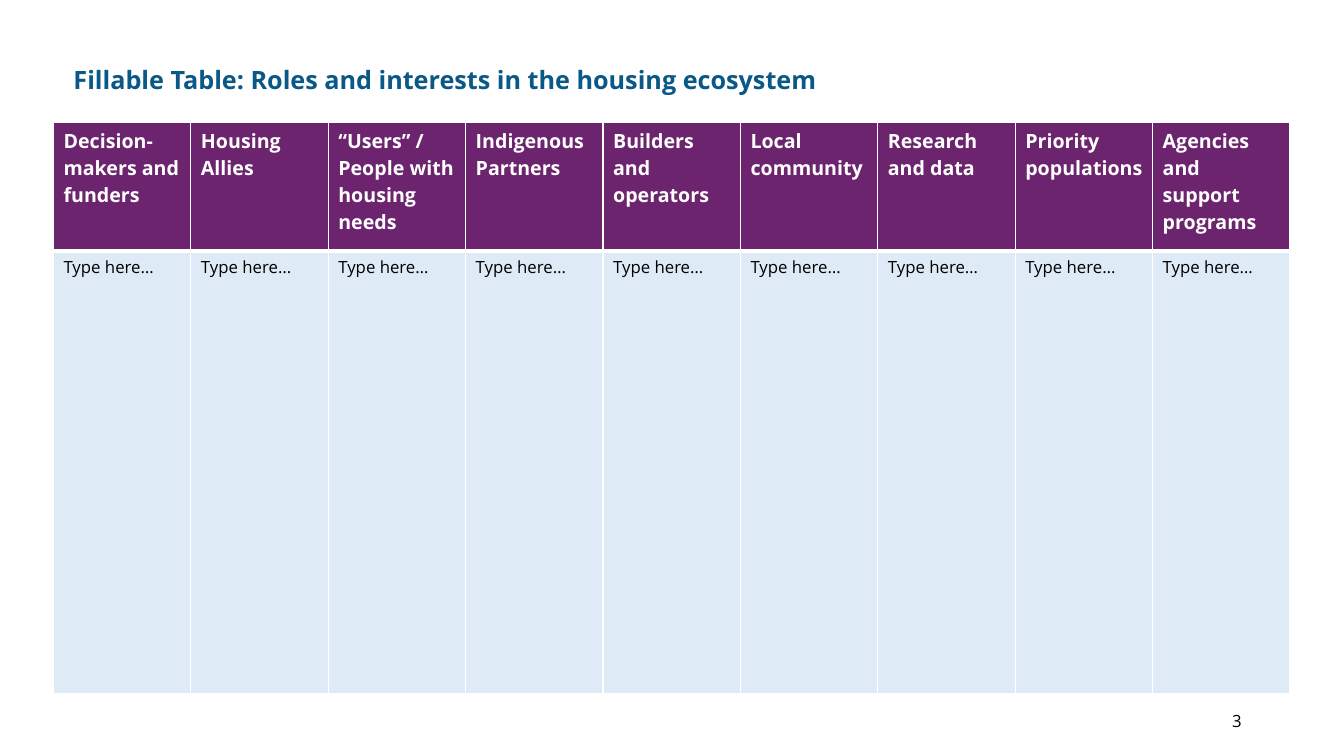
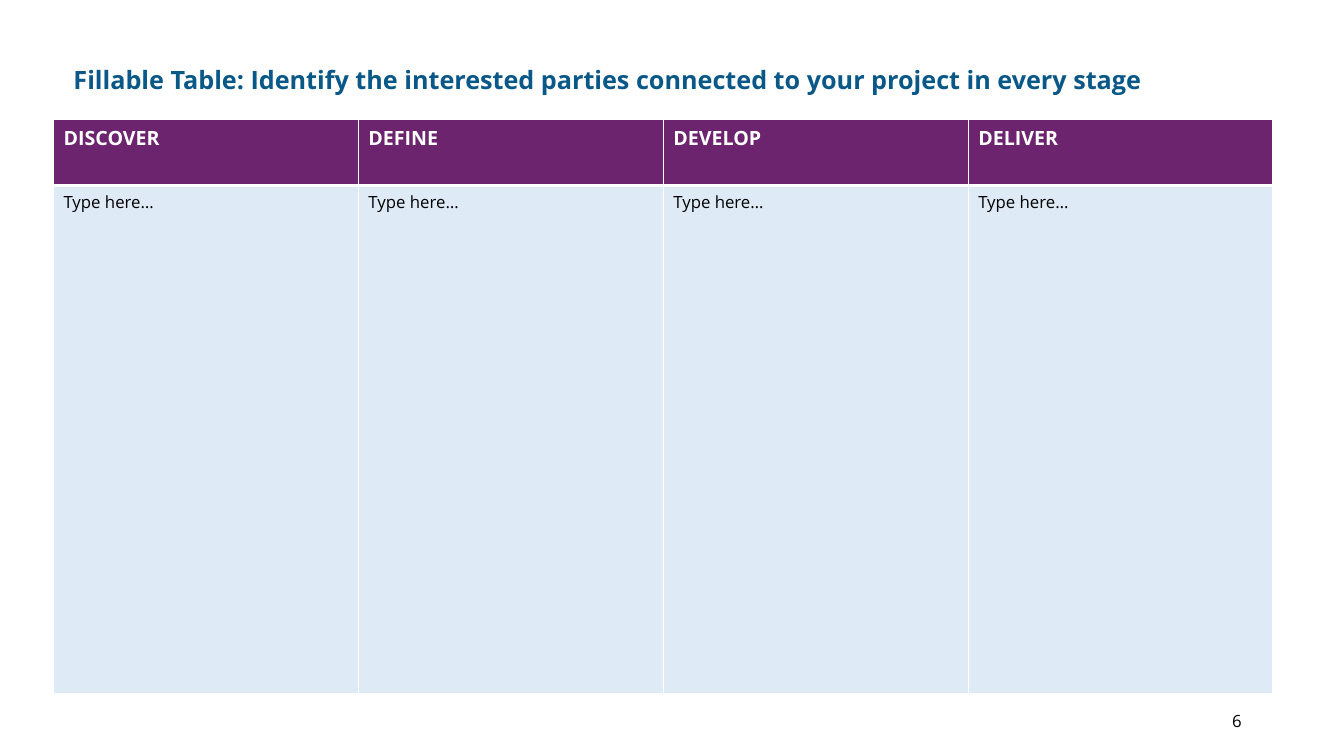
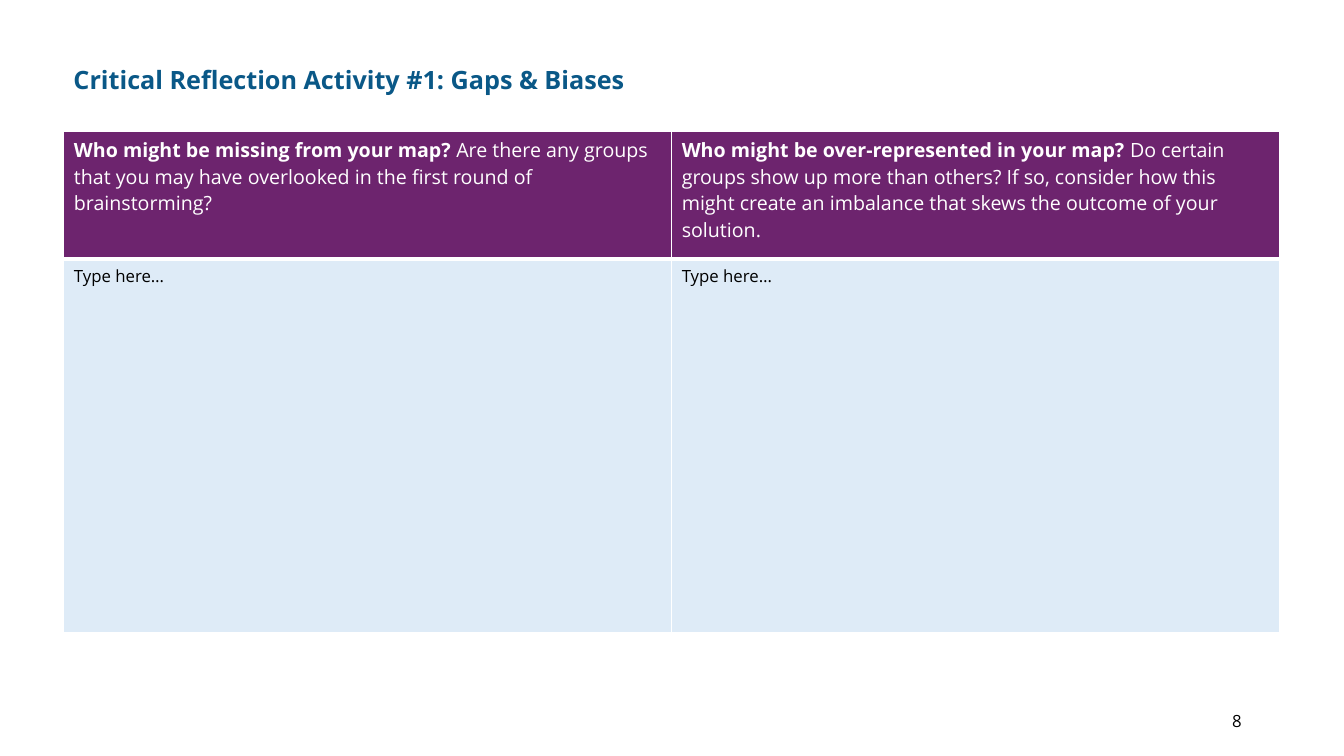
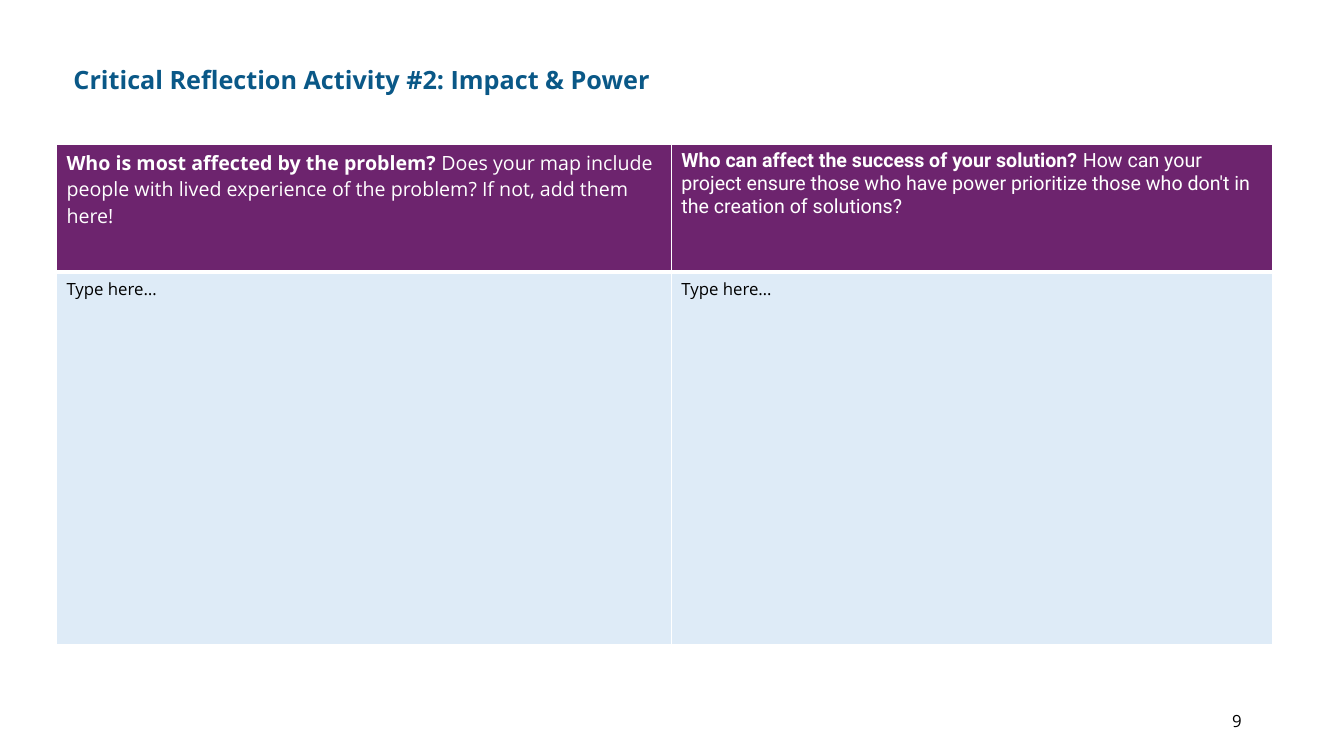
from dataclasses import dataclass

from lxml.etree import SubElement
from pptx import Presentation
from pptx.dml.color import RGBColor
from pptx.enum.text import MSO_ANCHOR as Anchor, MSO_AUTO_SIZE as AutoSize, PP_ALIGN as Align
from pptx.oxml.ns import qn
from pptx.util import Pt

# Shared style
FONT = "Open Sans"
TITLE_BLUE, HEADER_PURPLE, BODY_BLUE = "0A5887", "6D246E", "DEEBF7"
WHITE, BLACK = "FFFFFF", "000000"
THIN, THICK = 1, 3
HEADER_HEIGHT = 91.4
PROMPT = "Type here…"


@dataclass(frozen=True)
class Header:
    question: str
    detail: str = ""
    font: str = FONT


@dataclass(frozen=True)
class Worksheet:
    title: str
    title_width: float
    page: int
    left: float
    top: float
    column_widths: list[float]
    row_heights: tuple[float, float]
    headers: list[Header]


WORKSHEETS = [
    Worksheet(
        "Fillable Table: Roles and interests in the housing ecosystem",
        686, 3, 38.2, 87.8, [98.15] * 9, (HEADER_HEIGHT, 316.1),
        [Header(name) for name in (
            "Decision-makers and funders", "Housing Allies",
            "“Users” / People with housing needs", "Indigenous Partners",
            "Builders and operators", "Local community", "Research and data",
            "Priority populations", "Agencies and support programs")],
    ),
    Worksheet(
        "Fillable Table: Identify the interested parties connected to your project in every stage",
        857, 6, 38.2, 85, [217.8] * 4, (47.5, 362.9),
        [Header(name) for name in ("DISCOVER", "DEFINE", "DEVELOP", "DELIVER")],
    ),
    Worksheet(
        "Critical Reflection Activity #1: Gaps & Biases",
        480, 8, 45.6, 93.8, [434.2] * 2, (HEADER_HEIGHT, 266.4),
        [Header("Who might be missing from your map?",
                " Are there any groups that you may have overlooked in the "
                "first round of brainstorming?"),
         Header("Who might be over-represented in your map?",
                " Do certain groups show up more than others? If so, consider how this "
                "might create an imbalance that skews the outcome of your solution.")],
    ),
    Worksheet(
        "Critical Reflection Activity #2: Impact & Power",
        480, 9, 40.3, 103, [439.2, 429.8], (HEADER_HEIGHT, 266.4),
        [Header("Who is most affected by the problem?",
                " Does your map include people with lived experience of the "
                "problem? If not, add them here!"),
         Header("Who can affect the success of your solution? ",
                "How can your project ensure those who have power prioritize "
                "those who don't in the creation of solutions?", "Roboto")],
    ),
]


def rgb(color: str) -> RGBColor:
    return RGBColor.from_string(color)


def add_run(paragraph, text: str, size: float, color: str,
            bold: bool = False, font: str = FONT) -> None:
    run = paragraph.add_run()
    run.text = text
    run.font.name = font
    run.font.size = Pt(size)
    run.font.bold = bold
    run.font.color.rgb = rgb(color)


def add_text_box(slide, left: float, top: float, width: float, height: float):
    frame = slide.shapes.add_textbox(Pt(left), Pt(top), Pt(width), Pt(height)).text_frame
    frame.word_wrap = True
    return frame


def add_title(slide, text: str, width: float) -> None:
    frame = add_text_box(slide, 45.4, 44.6, width, 29)
    frame.auto_size = AutoSize.SHAPE_TO_FIT_TEXT
    paragraph = frame.paragraphs[0]
    paragraph.line_spacing = 0.9
    add_run(paragraph, text, 18, TITLE_BLUE, bold=True)


def add_page_number(slide, page: int) -> None:
    frame = add_text_box(slide, 678, 500.5, 216, 28.8)
    frame.vertical_anchor = Anchor.MIDDLE
    paragraph = frame.paragraphs[0]
    paragraph.alignment = Align.RIGHT
    add_run(paragraph, str(page), 12, BLACK)


def style_cell(cell, fill: str, top: float, bottom: float) -> None:
    # Borders come before the fill in the cell properties
    properties = cell._tc.get_or_add_tcPr()
    for side, width in (("L", THIN), ("R", THIN), ("T", top), ("B", bottom)):
        line = SubElement(properties, qn(f"a:ln{side}"), w=str(Pt(width)))
        line_fill = SubElement(line, qn("a:solidFill"))
        SubElement(line_fill, qn("a:srgbClr"), val=WHITE)
    cell.fill.solid()
    cell.fill.fore_color.rgb = rgb(fill)


def add_worksheet_table(slide, sheet: Worksheet) -> None:
    table = slide.shapes.add_table(
        2, len(sheet.headers), Pt(sheet.left), Pt(sheet.top),
        Pt(sum(sheet.column_widths)), Pt(sum(sheet.row_heights))).table
    table.horz_banding = False
    for row, height in zip(table.rows, sheet.row_heights):
        row.height = Pt(height)

    for index, (header, width) in enumerate(zip(sheet.headers, sheet.column_widths)):
        table.columns[index].width = Pt(width)
        # Header cell
        cell = table.cell(0, index)
        style_cell(cell, HEADER_PURPLE, THIN, THICK)
        paragraph = cell.text_frame.paragraphs[0]
        add_run(paragraph, header.question, 14, WHITE, True, header.font)
        if header.detail:
            add_run(paragraph, header.detail, 14, WHITE, False, header.font)
        # Answer cell
        cell = table.cell(1, index)
        style_cell(cell, BODY_BLUE, THICK, THIN)
        add_run(cell.text_frame.paragraphs[0], PROMPT, 12, BLACK)


def main() -> None:
    presentation = Presentation()
    presentation.slide_width, presentation.slide_height = Pt(960), Pt(540)
    blank_layout = presentation.slide_layouts[6]
    for sheet in WORKSHEETS:
        slide = presentation.slides.add_slide(blank_layout)
        add_title(slide, sheet.title, sheet.title_width)
        add_worksheet_table(slide, sheet)
        add_page_number(slide, sheet.page)
    presentation.save("out.pptx")


if __name__ == "__main__":
    main()
